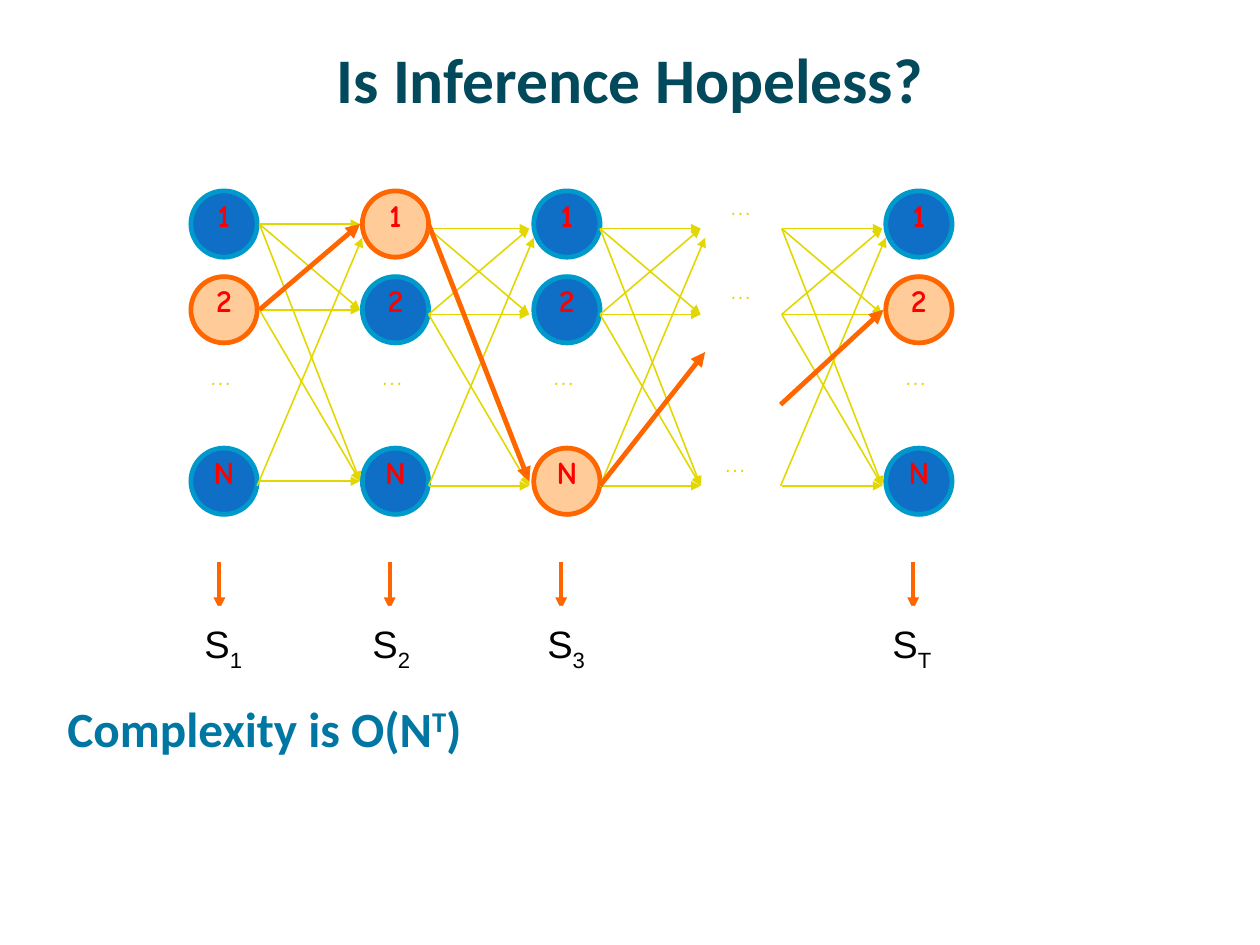
from itertools import product

from lxml.etree import SubElement
from pptx import Presentation
from pptx.dml.color import RGBColor
from pptx.enum.shapes import MSO_CONNECTOR, MSO_SHAPE
from pptx.enum.text import MSO_ANCHOR, MSO_AUTO_SIZE, PP_ALIGN
from pptx.oxml.ns import qn
from pptx.util import Emu, Pt

PX = 9144  # 100 px to the inch
SLIDE_WIDTH = Emu(10080625)  # 28 cm in whole 1/576 inch
SLIDE_HEIGHT = Emu(7559675)  # 21 cm in whole 1/576 inch

WHITE = RGBColor(0xFF, 0xFF, 0xFF)
BLACK = RGBColor(0x00, 0x00, 0x00)
DARK_TEAL = RGBColor(0x03, 0x49, 0x5C)
TEAL = RGBColor(0x00, 0x76, 0xA3)
BLUE = RGBColor(0x0F, 0x6F, 0xC6)
CYAN = RGBColor(0x00, 0x99, 0xCC)
PEACH = RGBColor(0xFF, 0xCC, 0x99)
ORANGE = RGBColor(0xFF, 0x66, 0x00)
YELLOW = RGBColor(0xE2, 0xD7, 0x00)
RED = RGBColor(0xFF, 0x00, 0x00)

NODE_SIZE = 58
NODE_TOP = 167
ROWS = {"1": 0, "2": 75, "N": 225}
# left of the column, highlighted state, left of its arrow, left of its label, time index
COLUMNS = [
    (167, "2", 192, 169, "1"),
    (317, "1", 341, 316, "2"),
    (467, "N", 491, 469, "3"),
    (775, "2", 799, 771, "T"),
]
# left and top of the transitions, left of the rising one
WEBS = [(227, 196, 225), (375, 200, 375), (525, 200, 525), (684, 200, 683)]
BEST_PATH = [
    (227, 271, 315, 196),
    (375, 196, 463, 421),
    (525, 425, 617, 308),
    (683, 354, 773, 271),
]
GAP_DOTS = [(630, 177), (630, 251), (625, 402)]


def emu(*lengths):
    return [length * PX for length in lengths]


def write(frame, text, shift_text="", end_text="", *, size, font, color, bold=False,
          shift=0, align=PP_ALIGN.LEFT, anchor=MSO_ANCHOR.TOP, wrap=False,
          spacing=None, margins=None):
    """Write text, then a part raised or lowered by shift, then the rest."""
    frame.word_wrap = wrap
    frame.vertical_anchor = anchor
    if margins:
        (frame.margin_left, frame.margin_top,
         frame.margin_right, frame.margin_bottom) = emu(*margins)
    para = frame.paragraphs[0]
    para.alignment = align
    if spacing:
        para.line_spacing = spacing
    for part, baseline in ((text, 0), (shift_text, shift), (end_text, 0)):
        if not part:
            continue
        span = para.add_run()
        span.text = part
        span.font.size = Pt(size)
        span.font.name = font
        span.font.bold = bold
        span.font.color.rgb = color
        if baseline:
            span.font._element.set("baseline", str(baseline * 1000))


def text_box(page, box, *parts, grow=False, **text_format):
    shape = page.shapes.add_textbox(*emu(*box))
    write(shape.text_frame, *parts, **text_format)
    if grow:
        shape.text_frame.auto_size = MSO_AUTO_SIZE.SHAPE_TO_FIT_TEXT


def arrow(page, ends, color, width):
    line = page.shapes.add_connector(MSO_CONNECTOR.STRAIGHT, *emu(*ends))
    line.line.color.rgb = color
    line.line.width = Pt(width)
    SubElement(line.line._get_or_add_ln(), qn("a:tailEnd"), type="triangle")
    SubElement(line._element.spPr, qn("a:effectLst"))


def dots(page, left, top):
    text_box(page, (left, top, 37, 22), "…", size=18, font="Comic Neue",
             color=YELLOW, spacing=0.27, grow=True)


def state_node(page, left, top, name, highlighted):
    node = page.shapes.add_shape(
        MSO_SHAPE.OVAL, *emu(left, top, NODE_SIZE, NODE_SIZE))
    node.shadow.inherit = False
    node.fill.solid()
    node.fill.fore_color.rgb = PEACH if highlighted else BLUE
    node.line.color.rgb = ORANGE if highlighted else CYAN
    node.line.width = Pt(3)
    write(node.text_frame, name, size=20, font="Comic Neue", color=RED, bold=True,
          align=PP_ALIGN.CENTER, anchor=MSO_ANCHOR.MIDDLE, spacing=0.27)


def state_column(page, left, top, highlighted, arrow_left):
    for name, offset in ROWS.items():
        state_node(page, left, top + offset, name, name == highlighted)
    dots(page, left + 8, top + 159)
    arrow(page, (arrow_left, top + 325, arrow_left, top + 366), ORANGE, 2.5)


def transitions(page, left, top, rising_left):
    for start, end in product(ROWS, ROWS):
        if start != "N" or end == "N":
            arrow(page, (left, top + ROWS[start], left + 88, top + ROWS[end]),
                  YELLOW, 1)
    arrow(page, (rising_left, 425, rising_left + 92, 208), YELLOW, 1)


def trellis(page):
    for left, highlighted, arrow_left, _, _ in COLUMNS:
        state_column(page, left, NODE_TOP, highlighted, arrow_left)
    for left, top in GAP_DOTS:
        dots(page, left, top)
    for web in WEBS:
        transitions(page, *web)
    for step in BEST_PATH:
        arrow(page, step, ORANGE, 3)


def state_labels(page, left, top, width, height):
    band = page.shapes.add_shape(
        MSO_SHAPE.RECTANGLE, *emu(left, top, width, height))
    band.shadow.inherit = False
    band.fill.solid()
    band.fill.fore_color.rgb = WHITE
    band.line.fill.background()
    for _, _, _, label_left, index in COLUMNS:
        text_box(page, (label_left, top + 8, 55, 50), "S", index, size=24,
                 font="Arial", color=BLACK, shift=-25, grow=True)


def main():
    deck = Presentation()
    deck.slide_width = SLIDE_WIDTH
    deck.slide_height = SLIDE_HEIGHT
    page = deck.slides.add_slide(deck.slide_layouts[6])
    text_box(page, (55, 18, 992, 101), "Is Inference Hopeless?", size=40,
             font="Calibri", color=DARK_TEAL, bold=True, align=PP_ALIGN.CENTER,
             anchor=MSO_ANCHOR.MIDDLE, wrap=True, margins=(11, 6, 11, 6))
    text_box(page, (37, 605, 1011, 134), "Complexity is O(N", "T", ")", size=31,
             font="Calibri", color=TEAL, bold=True, shift=30, wrap=True,
             margins=(22, 6, 11, 6))
    trellis(page)
    state_labels(page, 126, 530, 775, 67)
    deck.save("out.pptx")


if __name__ == "__main__":
    main()
